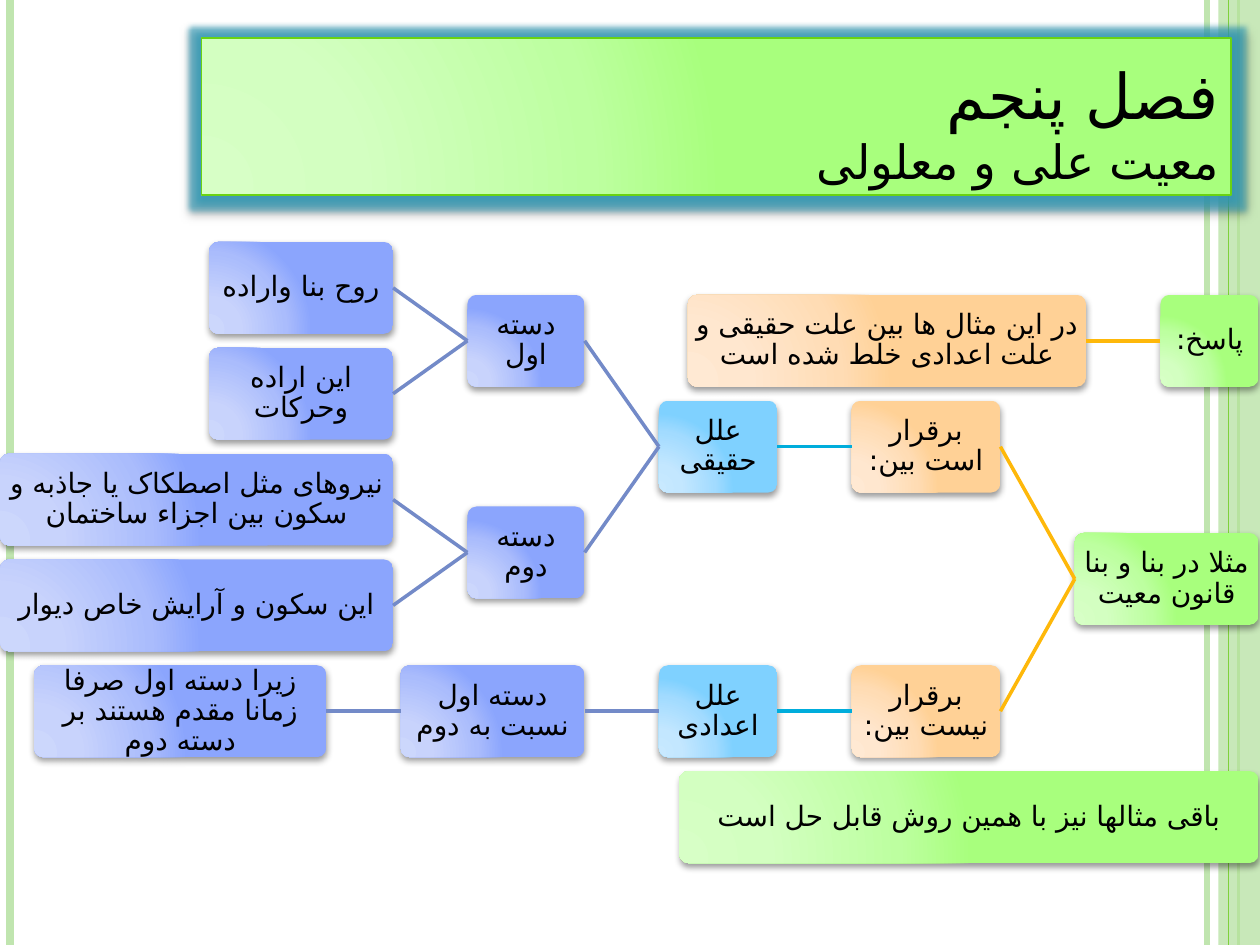
"""Build a right-to-left tree slide on the simultaneity of cause and effect."""
from lxml import etree
from pptx import Presentation
from pptx import util as u
from pptx.dml.color import RGBColor
from pptx.enum import shapes, text
from pptx.oxml import ns, parse_xml

COLORS = {
    "text": "000000", "pale": "C0E5AF", "stripe": "7FD13B", "border": "6AD312", "glow": "2F9BB8",
    "green": ("D7FFC6", "D3FFC1", "BDFFA0", "A8FF7D"),
    "orange": ("FFE9D3", "FFE7CF", "FFDCB4", "FFD196"),
    "sky": ("C8E9FF", "C3E7FF", "A2DBFF", "7FD1FF"),
    "violet": ("CCD7FC", "C8D3FC", "AABCFC", "8BA5FD"),
}
LINKS = {"orange": "FEB80A", "sky": "00ADDC", "violet": "738AC8"}
FONT, ARABIC_FONT = "TeX Gyre Schola", "DejaVu Sans"
ROW, TOP, RIGHT, GAP, HEIGHT = 0.42, 1.92, 9.99, 0.59, 0.73

presentation = Presentation()
presentation.slide_width, presentation.slide_height = u.Inches(10), u.Inches(7.5)
slide = presentation.slides.add_slide(presentation.slide_layouts[6])


def add_line(x1, y1, x2, y2, color, width):
    line = slide.shapes.add_connector(shapes.MSO_CONNECTOR.STRAIGHT, *map(u.Inches, (x1, y1, x2, y2)))
    line.line.color.rgb = RGBColor.from_string(color)
    line.line.width = u.Pt(width)
    etree.SubElement(line.element.spPr, ns.qn("a:effectLst"))
    return line


def add_panel(kind, left, top, width, height, palette, runs, align, glow=""):
    shape = slide.shapes.add_shape(kind, *map(u.Inches, (left, top, width, height)))
    shape.fill.background()
    shape.line.fill.background()
    shape.shadow.inherit = False
    properties = shape.element.spPr
    stops = "".join(f'<a:gs pos="{place}000"><a:srgbClr val="{color}"/></a:gs>'
                    for place, color in zip((0, 30, 75, 100), COLORS[palette]))
    properties.replace(properties.find(ns.qn("a:noFill")), parse_xml(
        f'<a:gradFill {ns.nsdecls("a")} rotWithShape="1"><a:gsLst>{stops}</a:gsLst><a:path path="circle">'
        '<a:fillToRect l="5000" t="100000" r="120000" b="10000"/></a:path></a:gradFill>'))
    properties.replace(properties.find(ns.qn("a:effectLst")), parse_xml(
        f'<a:effectLst {ns.nsdecls("a")}>{glow}<a:outerShdw blurRad="50800" dist="25400" dir="5400000" '
        'rotWithShape="0"><a:srgbClr val="000000"><a:alpha val="40000"/></a:srgbClr></a:outerShdw></a:effectLst>'))
    shape.text_frame.word_wrap = True
    paragraph = shape.text_frame.paragraphs[0]
    paragraph.alignment = align
    paragraph.font.name = FONT
    paragraph.font.size = u.Pt(runs[0][1])
    paragraph.font.color.rgb = RGBColor.from_string(COLORS["text"])
    paragraph_properties = paragraph._p.get_or_add_pPr()
    paragraph_properties.set("rtl", "1")
    etree.SubElement(paragraph_properties.find(ns.qn("a:defRPr")), ns.qn("a:cs"), typeface=ARABIC_FONT)
    for index, (words, size) in enumerate(runs):
        if index:
            paragraph.add_line_break()
        run = paragraph.add_run()
        run.text = words
        if size != runs[0][1]:
            run.font.size = u.Pt(size)
    return shape


for x, color, width in ((9.58, "pale", 3), (0.08, "pale", 4.5), (9.83, "stripe", 1.5)):
    add_line(x, 0, x, 7.5, COLORS[color], width)
band = slide.shapes.add_shape(shapes.MSO_SHAPE.RECTANGLE, *map(u.Inches, (9.67, 0, 0.33, 7.5)))
band.shadow.inherit = False
band.line.fill.background()
band.fill.solid()
band.fill.fore_color.rgb = RGBColor.from_string(COLORS["pale"])
band_color = band.element.spPr.find(ns.qn("a:solidFill"))[0]
etree.SubElement(band_color, ns.qn("a:alpha"), val="87000")
add_line(9.75, 0, 9.75, 7.5, COLORS["stripe"], 0.75)

title_glow = (f'<a:glow rad="76200"><a:srgbClr val="{COLORS["glow"]}">'
              '<a:alpha val="60000"/></a:srgbClr></a:glow>')
title = add_panel(shapes.MSO_SHAPE.RECTANGLE, 1.6, 0.3, 8.17, 1.25, "green",
                  [("فصل پنجم", 36), ("معیت علی و معلولی", 27)], text.PP_ALIGN.RIGHT, title_glow)
title.line.color.rgb = RGBColor.from_string(COLORS["border"])
title.line.width = u.Pt(1)
title.text_frame.vertical_anchor = text.MSO_ANCHOR.BOTTOM

nodes = [
    ("answer", None, 1, 0.78, "green", "پاسخ:"),
    ("mixed", "answer", 1, 3.16, "orange", "در این مثال ها بین علت حقیقی و علت اعدادی خلط شده است"),
    ("example", None, 5.5, 1.46, "green", "مثلا در بنا و بنا قانون معیت"),
    ("holds", "example", 3, 1.18, "orange", "برقرار است بین:"),
    ("real", "holds", 3, 0.94, "sky", "علل حقیقی"),
    ("first", "real", 1, 0.93, "violet", "دسته اول"),
    ("spirit", "first", 0, 1.46, "violet", "روح بنا واراده"),
    ("will", "first", 2, 1.46, "violet", "این اراده وحرکات"),
    ("second", "real", 5, 0.93, "violet", "دسته دوم"),
    ("forces", "second", 4, 3.12, "violet", "نیروهای مثل اصطکاک یا جاذبه و سکون بین اجزاء ساختمان"),
    ("stillness", "second", 6, 3.12, "violet", "این سکون و آرایش خاص دیوار"),
    ("fails", "example", 8, 1.18, "orange", "برقرار نیست بین:"),
    ("preparing", "fails", 8, 0.94, "sky", "علل اعدادی"),
    ("relation", "preparing", 8, 1.46, "violet", "دسته اول نسبت به دوم"),
    ("reason", "relation", 8, 2.32, "violet", "زیرا دسته اول صرفا زمانا مقدم هستند بر دسته دوم"),
    ("rest", None, 10, 4.6, "green", "باقی مثالها نیز با همین روش قابل حل است"),
]
boxes = {}
for name, parent, row, width, palette, words in nodes:
    right = boxes[parent].left / u.Inches(1) - GAP if parent else RIGHT
    box = add_panel(shapes.MSO_SHAPE.ROUNDED_RECTANGLE, right - width, TOP + row * ROW, width, HEIGHT,
                    palette, [(words, 16)], text.PP_ALIGN.CENTER)
    box.adjustments[0] = 0.1
    frame = box.text_frame
    frame.vertical_anchor = text.MSO_ANCHOR.MIDDLE
    frame.margin_left = frame.margin_right = frame.margin_top = frame.margin_bottom = u.Inches(0.03)
    frame.paragraphs[0].line_spacing = 0.9
    boxes[name] = box
    if parent:
        link = add_line(0, 0, 1, 1, LINKS[palette], 2)
        link.begin_connect(boxes[parent], 1)
        link.end_connect(box, 3)

presentation.save("out.pptx")
